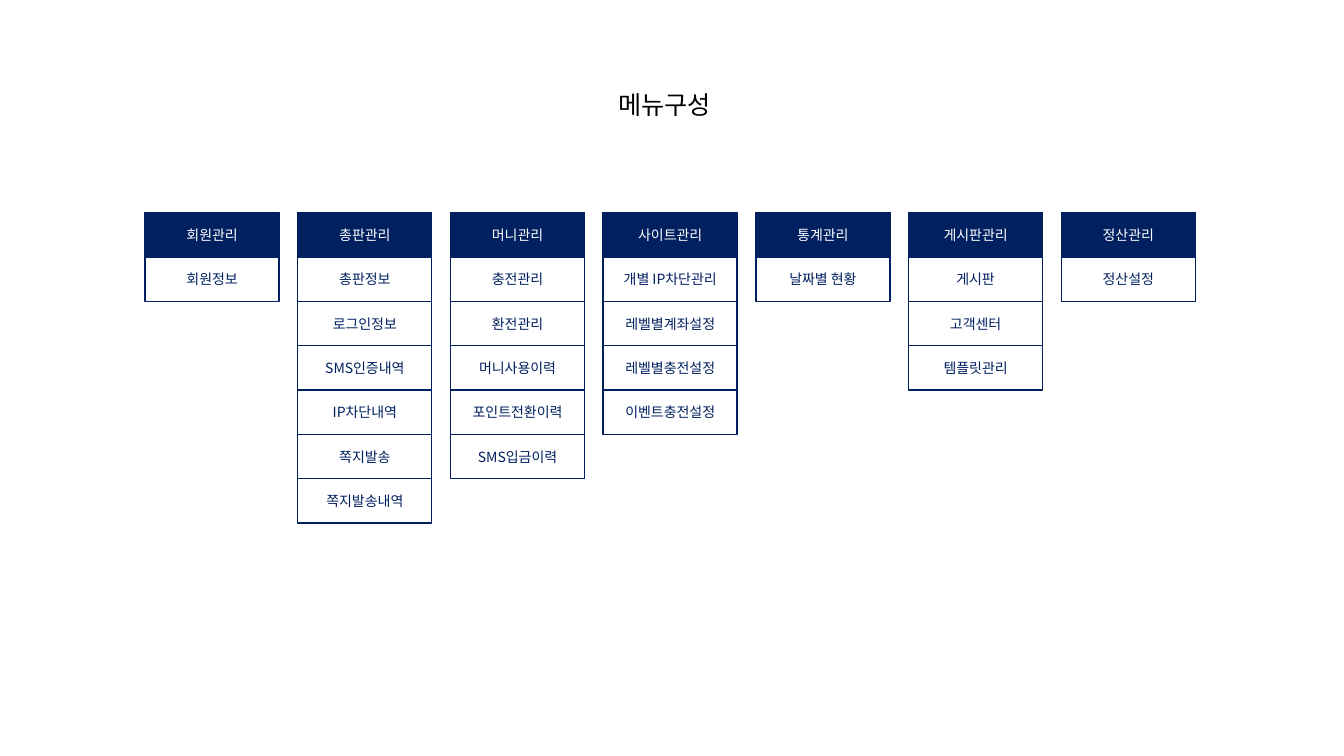
"""Build the menu structure slide: seven menu columns under a centred title."""
from dataclasses import dataclass

from lxml import etree
from pptx import Presentation
from pptx import util as u
from pptx.dml.color import RGBColor
from pptx.enum import shapes, text
from pptx.oxml import ns

PX = u.Inches(1) // 200


@dataclass(frozen=True)
class Theme:
    navy: str = "002060"
    white: str = "FFFFFF"
    black: str = "000000"
    font: str = "Noto Sans CJK KR"
    title_size: int = 18
    cell_size: int = 10
    line_width: int = 1


MENUS = {
    "회원관리": ["회원정보"],
    "총판관리": ["총판정보", "로그인정보", "SMS인증내역", "IP차단내역", "쪽지발송", "쪽지발송내역"],
    "머니관리": ["충전관리", "환전관리", "머니사용이력", "포인트전환이력", "SMS입금이력"],
    "사이트관리": ["개별 IP차단관리", "레벨별계좌설정", "레벨별충전설정", "이벤트충전설정"],
    "통계관리": ["날짜별 현황"],
    "게시판관리": ["게시판", "고객센터", "템플릿관리"],
    "정산관리": ["정산설정"],
}
LEFT, TOP = 288, 422
CELL_W, CELL_H = 266, 88
COLUMN_STEP = 303


class MenuSlide:
    def __init__(self, prs, theme):
        self.theme = theme
        self.s = prs.slides.add_slide(prs.slide_layouts[5])

    def label(self, sp, words, size, color, **frame):
        tf = sp.text_frame
        for name, value in frame.items():
            setattr(tf, name, value)
        p = tf.paragraphs[0]
        p.alignment = text.PP_ALIGN.CENTER
        r = p.add_run()
        r.text = words
        r.font.size = u.Pt(size)
        r.font.name = self.theme.font
        r.font.color.rgb = RGBColor.from_string(color)
        ea = etree.SubElement(r.font._element, ns.qn("a:ea"))
        ea.set("typeface", self.theme.font)

    def title(self, words, x, y, w, h):
        sp = self.s.shapes.title
        box = {"left": x, "top": y, "width": w, "height": h}
        for name, value in box.items():
            setattr(sp, name, value * PX)
        self.label(sp, words, self.theme.title_size, self.theme.black,
                   word_wrap=False,
                   auto_size=text.MSO_AUTO_SIZE.SHAPE_TO_FIT_TEXT,
                   vertical_anchor=text.MSO_ANCHOR.TOP)

    def cell(self, words, x, y, fill, color):
        sp = self.s.shapes.add_shape(
            shapes.MSO_SHAPE.RECTANGLE, x * PX, y * PX, CELL_W * PX, CELL_H * PX)
        sp.shadow.inherit = False
        sp.fill.solid()
        sp.fill.fore_color.rgb = RGBColor.from_string(fill)
        sp.line.color.rgb = RGBColor.from_string(self.theme.navy)
        sp.line.width = u.Pt(self.theme.line_width)
        self.label(sp, words, self.theme.cell_size, color,
                   word_wrap=True, vertical_anchor=text.MSO_ANCHOR.MIDDLE)

    def menu(self, heading, items, x):
        navy, white = self.theme.navy, self.theme.white
        self.cell(heading, x, TOP, navy, white)
        for row, item in enumerate(items, 1):
            self.cell(item, x, TOP + row * CELL_H, white, navy)


def main():
    prs = Presentation()
    prs.slide_width, prs.slide_height = 2667 * PX, 1500 * PX
    slide = MenuSlide(prs, Theme())
    slide.title("메뉴구성", 1198, 168, 242, 80)
    for column, (heading, items) in enumerate(MENUS.items()):
        slide.menu(heading, items, LEFT + column * COLUMN_STEP)
    prs.save("out.pptx")


if __name__ == "__main__":
    main()
